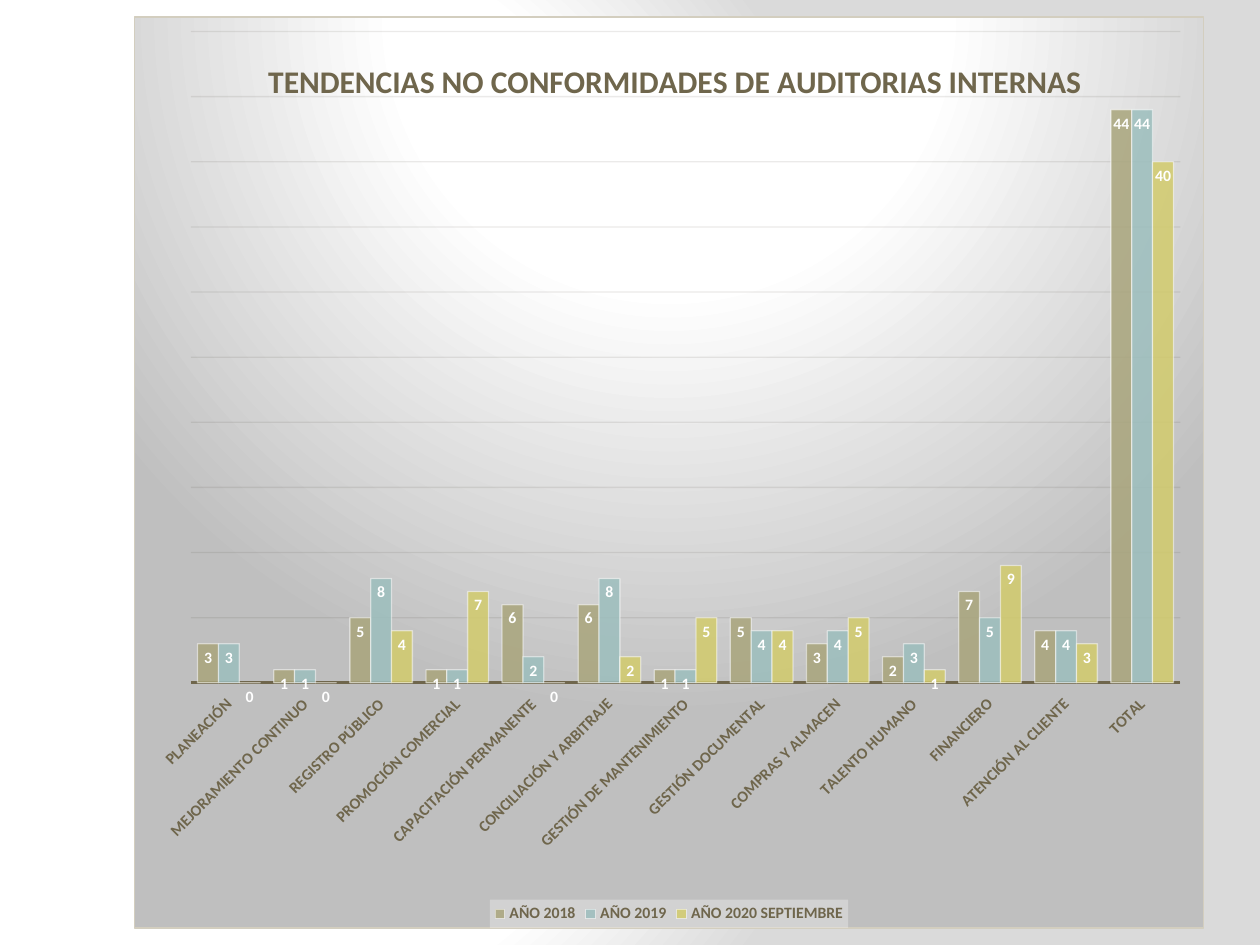
from pptx import Presentation
from pptx.chart.data import CategoryChartData
from pptx.dml.color import RGBColor
from pptx.dml.fill import FillFormat
from pptx.dml.line import LineFormat
from pptx.enum.chart import XL_CHART_TYPE, XL_LABEL_POSITION, XL_LEGEND_POSITION, XL_TICK_LABEL_POSITION, XL_TICK_MARK
from pptx.oxml import parse_xml
from pptx.oxml.ns import nsdecls, qn
from pptx.util import Inches, Pt
from lxml.etree import SubElement


def paint(fill, color, opacity=100):
    fill.solid()
    fill.fore_color.rgb = RGBColor.from_string(color)
    if opacity < 100:
        solid = fill._xPr.find(qn("a:solidFill"))
        SubElement(solid[0], qn("a:alpha"), val=str(opacity * 1000))


def radial_gradient(stops, focus):
    stop_xml = "".join(f'<a:gs pos="{position * 1000}"><a:srgbClr val="{color}"/></a:gs>' for position, color in stops)
    left, top, right, bottom = (side * 1000 for side in focus)
    return parse_xml(
        f'<a:gradFill {nsdecls("a")} rotWithShape="1"><a:gsLst>{stop_xml}</a:gsLst><a:path path="circle">'
        f'<a:fillToRect l="{left}" t="{top}" r="{right}" b="{bottom}"/></a:path></a:gradFill>')


BROWN = "6F664C"
WHITE = "FFFFFF"

areas = ["PLANEACIÓN", "MEJORAMIENTO CONTINUO", "REGISTRO PÚBLICO", "PROMOCIÓN COMERCIAL",
         "CAPACITACIÓN PERMANENTE", "CONCILIACIÓN Y ARBITRAJE", "GESTIÓN DE MANTENIMIENTO",
         "GESTIÓN DOCUMENTAL", "COMPRAS Y ALMACEN", "TALENTO HUMANO", "FINANCIERO",
         "ATENCIÓN AL CLIENTE", "TOTAL"]
years = [
    ("AÑO 2018", "A9A57C", [3, 1, 5, 1, 6, 6, 1, 5, 3, 2, 7, 4, 44]),
    ("AÑO 2019", "9CBEBD", [3, 1, 8, 1, 2, 8, 1, 4, 4, 3, 5, 4, 44]),
    ("AÑO 2020 SEPTIEMBRE", "D2CB6C", [0, 0, 4, 7, 0, 2, 5, 4, 5, 1, 9, 3, 40]),
]

prs = Presentation()
prs.slide_width, prs.slide_height = Inches(10), Inches(7.5)
slide = prs.slides.add_slide(prs.slide_layouts[6])
background = slide.background.fill
background.gradient()
backdrop = background._xPr
backdrop.replace(backdrop.find(qn("a:gradFill")),
                 radial_gradient([(0, WHITE), (75, WHITE), (100, "DADADA")], (20, 50, 100, 50)))

findings = CategoryChartData()
findings.categories = areas
for year, color, counts in years:
    findings.add_series(year, counts)
chart = slide.shapes.add_chart(XL_CHART_TYPE.COLUMN_CLUSTERED, Inches(1.06), Inches(0.13),
                               Inches(8.5), Inches(7.24), findings).chart
chart.font.name = "Calibri"
chart.font.size = Pt(10)
paint(chart.font.fill, "2F2B20")

chart_xml = chart._chartSpace.find(qn("c:chart"))
panel = parse_xml(f'<c:spPr {nsdecls("c", "a")}/>')
panel.append(radial_gradient([(0, WHITE), (39, WHITE), (100, "BFBFBF")], (50, -80, 50, 180)))
chart_xml.addnext(panel)
border = LineFormat(panel)
border.width = Pt(0.75)
paint(border.fill, "D3CEBF")

chart.has_title = True
heading = chart.chart_title.text_frame.paragraphs[0]
heading.text = "TENDENCIAS NO CONFORMIDADES DE AUDITORIAS INTERNAS"
heading.font.name = "Calibri"
heading.font.size = Pt(18)
heading.font.bold = True
paint(heading.font.fill, BROWN)

heading_layout = parse_xml(
    f'<c:layout {nsdecls("c")}><c:manualLayout><c:xMode val="edge"/><c:yMode val="edge"/>'
    '<c:x val="0.12"/><c:y val="0.04"/></c:manualLayout></c:layout>')
plot_layout = parse_xml(
    f'<c:layout {nsdecls("c")}><c:manualLayout><c:layoutTarget val="inner"/>'
    '<c:xMode val="edge"/><c:yMode val="edge"/><c:x val="0.053"/><c:y val="0.016"/>'
    '<c:w val="0.925"/><c:h val="0.715"/></c:manualLayout></c:layout>')
for holder, layout, place in ((chart.chart_title._element, heading_layout, 1),
                              (chart_xml.find(qn("c:plotArea")), plot_layout, 0)):
    for automatic in holder.findall(qn("c:layout")):
        holder.remove(automatic)
    holder.insert(place, layout)

area_axis = chart.category_axis
area_axis.major_tick_mark = XL_TICK_MARK.NONE
area_axis.tick_label_position = XL_TICK_LABEL_POSITION.LOW
area_axis.format.line.width = Pt(1.5)
paint(area_axis.format.line.fill, BROWN)

count_axis = chart.value_axis
count_axis.minimum_scale = 0
count_axis.maximum_scale = 50
count_axis.major_unit = 5
count_axis.visible = False
gridline = count_axis.major_gridlines.format.line
gridline.width = Pt(0.75)
paint(gridline.fill, "3C3729", 10)

chart.has_legend = True
legend = chart.legend
legend.position = XL_LEGEND_POSITION.BOTTOM
legend.include_in_layout = False

plot = chart.plots[0]
plot.gap_width = 65
plot.overlap = 0
plot.vary_by_categories = False
small_fonts = [(area_axis.tick_labels.font, BROWN), (legend.font, BROWN)]
for series, (year, color, counts) in zip(plot.series, years):
    paint(series.format.fill, color, 85)
    series.format.line.width = Pt(0.75)
    paint(series.format.line.fill, WHITE, 50)
    labels = series.data_labels
    labels.show_value = True
    labels.position = XL_LABEL_POSITION.INSIDE_END
    small_fonts.append((labels.font, WHITE))

for font, color in small_fonts:
    font.name = "Calibri"
    font.size = Pt(9)
    font.bold = True
    paint(font.fill, color)

area_axis._element.find(qn("c:txPr")).find(qn("a:bodyPr")).set("rot", "-2700000")
legend_panel = parse_xml(f'<c:spPr {nsdecls("c", "a")}/>')
legend._element.find(qn("c:txPr")).addprevious(legend_panel)
paint(FillFormat.from_fill_parent(legend_panel), "F2F2F2", 39)

prs.save("out.pptx")
